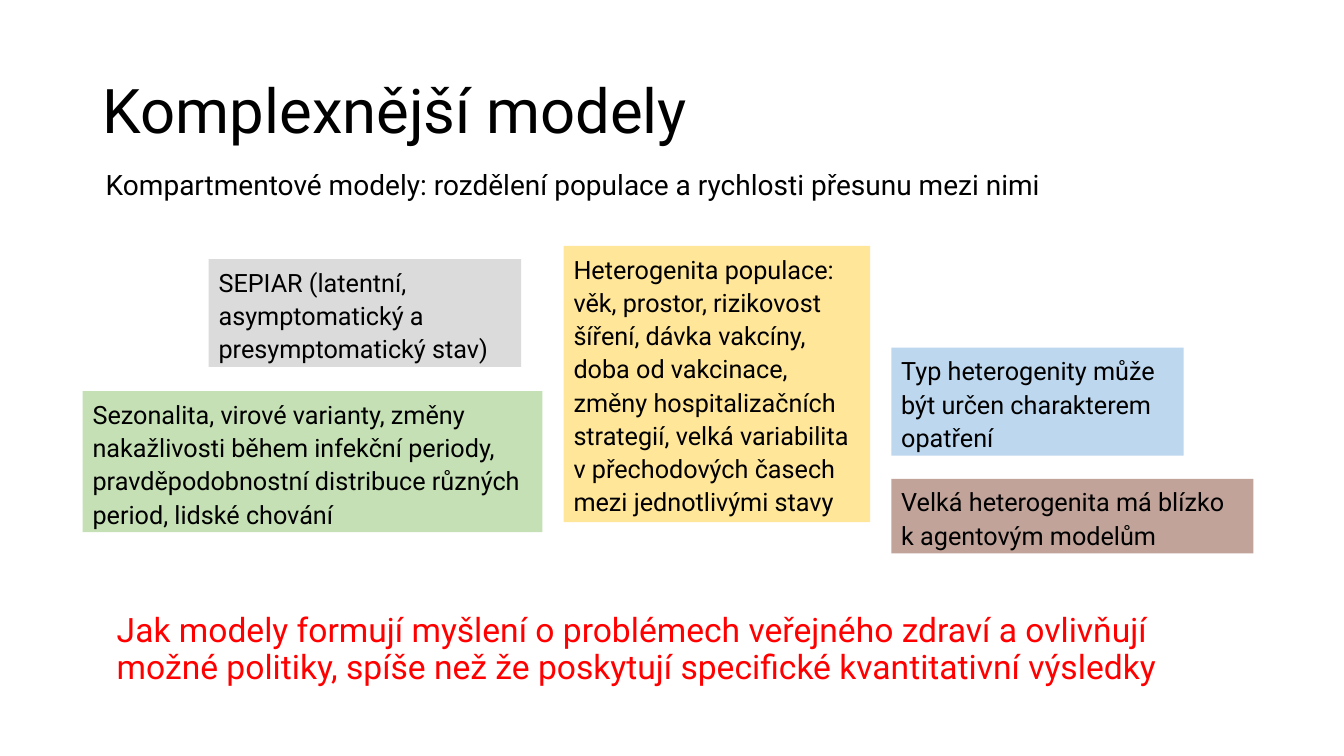
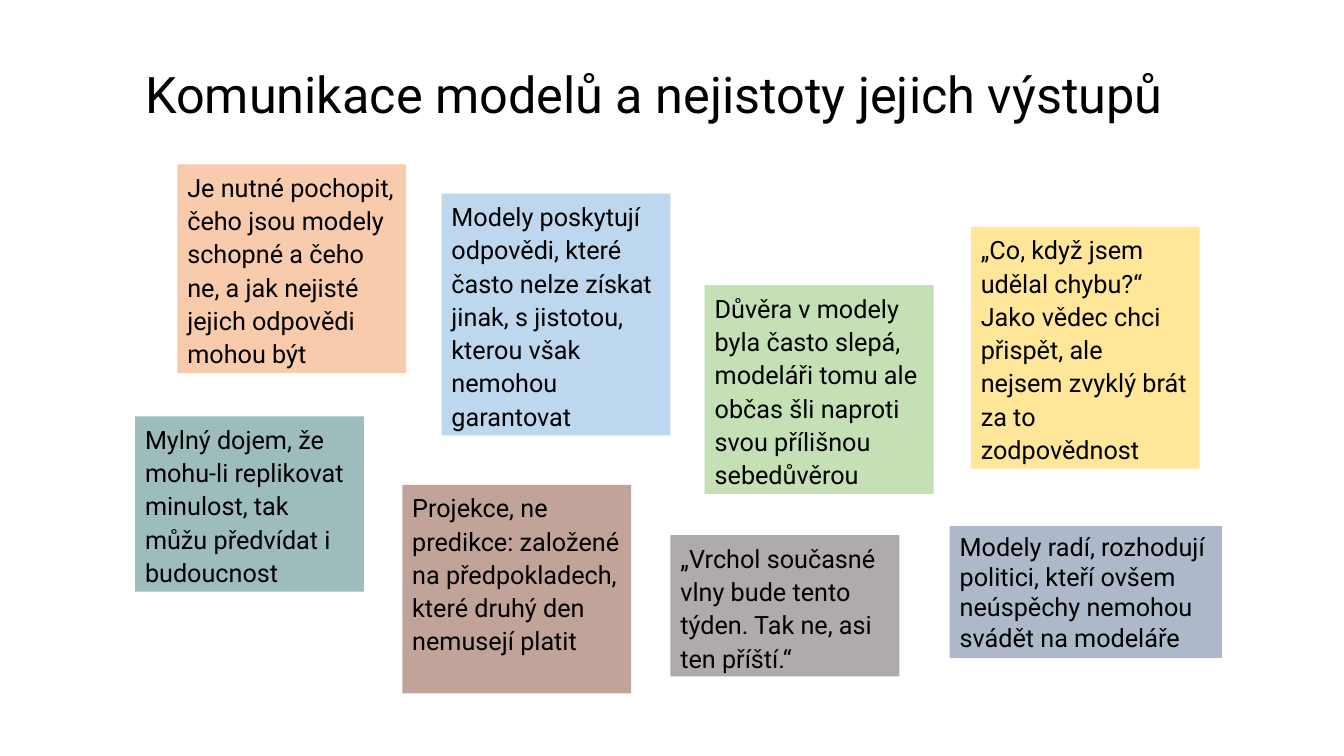
import pptx
import pptx.util
import pptx.dml.color
import pptx.enum.shapes
import pptx.enum.text
from pptx.util import Inches

FONT = "Roboto"
COLOURS = {
    "black": "000000", "red": "FF0000", "silver": "DBDBDB", "grey": "AFABAB",
    "blue": "BDD7EE", "slate": "ADB9CA", "green": "C5E0B4", "teal": "9DBDBC",
    "yellow": "FFE699", "orange": "F8CBAD", "brown": "C1A399",
}
NOTE_WIDTH = 2.27


def rgb(name):
    return pptx.dml.color.RGBColor.from_string(COLOURS[name])


def write(shape, text, size, colour="black", anchor="TOP", line_spacing=1.0, space_before=0):
    frame = shape.text_frame
    frame.text = text
    frame.word_wrap = True
    frame.auto_size = pptx.enum.text.MSO_AUTO_SIZE.NONE
    frame.vertical_anchor = pptx.enum.text.MSO_ANCHOR[anchor]
    paragraph = frame.paragraphs[0]
    paragraph.alignment = pptx.enum.text.PP_ALIGN.LEFT
    paragraph.line_spacing = line_spacing
    paragraph.space_before = pptx.util.Pt(space_before)
    paragraph.font.name = FONT
    paragraph.font.size = pptx.util.Pt(size)
    paragraph.font.color.rgb = rgb(colour)


# Title: text, size, left, top
# Plain text: text, size, colour, line spacing, space before, left, top, width, height
# Notes: text, colour, left, top, width, height, then line spacing and space before
LOOSE = (1.1, 6)
TIGHT = (1.0, 0)
slides = [
    {
        "title": ("Komplexnější modely", 44, 0.92, 0.4),
        "texts": [
            ("Kompartmentové modely: rozdělení populace a rychlosti přesunu mezi nimi",
             20, "black", 1.0, 0, 0.95, 1.61, 10.51, 0.44),
            ("Jak modely formují myšlení o problémech veřejného zdraví a ovlivňují možné "
             "politiky, spíše než že poskytují specifické kvantitativní výsledky",
             24, "red", 0.9, 6, 1.06, 6.04, 11.5, 1.07),
        ],
        "notes": [
            ("SEPIAR (latentní, asymptomatický a presymptomatický stav)",
             "silver", 2.07, 2.57, 3.1, 1.07, LOOSE),
            ("Typ heterogenity může být určen charakterem opatření",
             "blue", 8.84, 3.45, 2.9, 1.07, LOOSE),
            ("Sezonalita, virové varianty, změny nakažlivosti během infekční periody, "
             "pravděpodobnostní distribuce různých period, lidské chování",
             "green", 0.82, 3.88, 4.56, 1.4, LOOSE),
            ("Heterogenita populace: věk, prostor, rizikovost šíření, dávka vakcíny, "
             "doba od vakcinace, změny hospitalizačních strategií, velká variabilita "
             "v přechodových časech mezi jednotlivými stavy",
             "yellow", 5.59, 2.44, 3.04, 2.74, LOOSE),
            ("Velká heterogenita má blízko k agentovým modelům",
             "brown", 8.84, 4.75, 3.59, 0.74, LOOSE),
        ],
    },
    {
        "title": ("Komunikace modelů a nejistoty jejich výstupů", 36, 1.34, 0.24),
        "texts": [],
        "notes": [
            ("Modely radí, rozhodují politici, kteří ovšem neúspěchy nemohou svádět na modeláře",
             "slate", 9.42, 5.22, 2.7, 1.31, TIGHT),
            ("Je nutné pochopit, čeho jsou modely schopné a čeho ne, a jak nejisté "
             "jejich odpovědi mohou být",
             "orange", 1.76, 1.63, NOTE_WIDTH, 2.07, LOOSE),
            ("Projekce, ne predikce: založené na předpokladech, které druhý den nemusejí platit",
             "brown", 3.99, 4.81, NOTE_WIDTH, 2.07, LOOSE),
            ("Modely poskytují odpovědi, které často nelze získat jinak, s jistotou, "
             "kterou však nemohou garantovat",
             "blue", 4.38, 1.92, NOTE_WIDTH, 2.4, LOOSE),
            ("Mylný dojem, že mohu-li replikovat minulost, tak můžu předvídat i budoucnost",
             "teal", 1.34, 4.13, NOTE_WIDTH, 1.74, LOOSE),
            ("Důvěra v modely byla často slepá, modeláři tomu ale občas šli naproti "
             "svou přílišnou sebedůvěrou",
             "green", 6.99, 2.83, NOTE_WIDTH, 2.07, LOOSE),
            ("„Co, když jsem udělal chybu?“ Jako vědec chci přispět, ale nejsem zvyklý "
             "brát za to zodpovědnost",
             "yellow", 9.63, 2.25, NOTE_WIDTH, 2.4, LOOSE),
            ("„Vrchol současné vlny bude tento týden. Tak ne, asi ten příští.“",
             "grey", 6.65, 5.31, NOTE_WIDTH, 1.4, LOOSE),
        ],
    },
]

presentation = pptx.Presentation()
presentation.slide_width = Inches(13.33)
presentation.slide_height = Inches(7.5)
title_only = presentation.slide_layouts[5]

for content in slides:
    slide = presentation.slides.add_slide(title_only)

    # Title
    text, size, left, top = content["title"]
    title = slide.shapes.title
    title.left, title.top = Inches(left), Inches(top)
    title.width, title.height = Inches(11.5), Inches(1.45)
    write(title, text, size, anchor="MIDDLE", line_spacing=0.9)

    # Plain text
    for text, size, colour, line_spacing, space_before, *box in content["texts"]:
        shape = slide.shapes.add_textbox(*map(Inches, box))
        write(shape, text, size, colour, line_spacing=line_spacing, space_before=space_before)

    # Coloured notes
    for text, colour, *box, spacing in content["notes"]:
        shape = slide.shapes.add_shape(
            pptx.enum.shapes.MSO_SHAPE.RECTANGLE, *map(Inches, box))
        shape.shadow.inherit = False
        shape.fill.solid()
        shape.fill.fore_color.rgb = rgb(colour)
        shape.line.fill.background()
        line_spacing, space_before = spacing
        write(shape, text, 18, line_spacing=line_spacing, space_before=space_before)

presentation.save("out.pptx")
